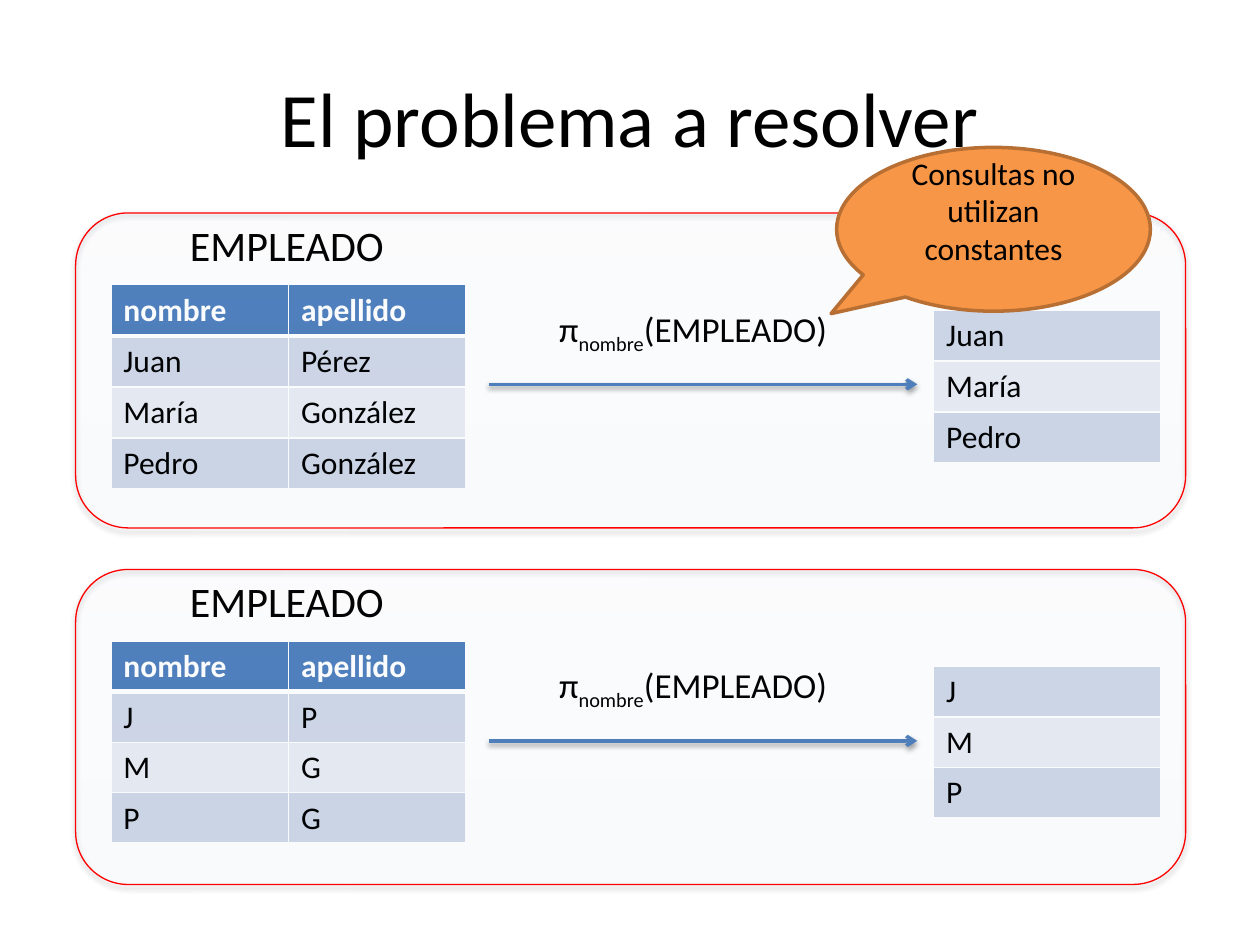
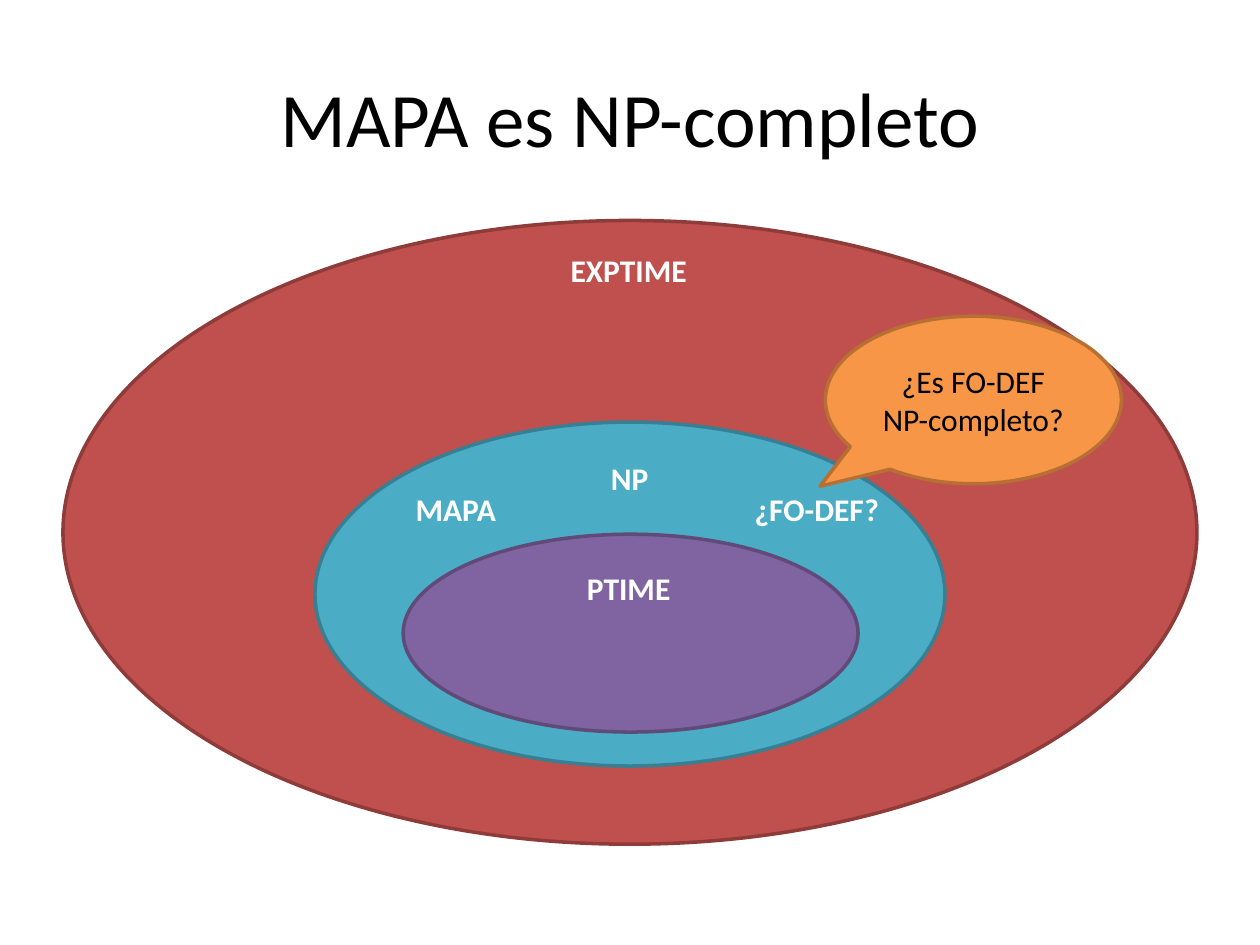
from lxml.etree import SubElement as Sub
from pptx import Presentation
from pptx.dml.color import RGBColor as RGB
from pptx.enum.shapes import MSO_CONNECTOR as LINK, MSO_SHAPE as SHAPE
from pptx.enum.text import MSO_ANCHOR as ANCHOR, PP_ALIGN as ALIGN
from pptx.oxml.ns import qn
from pptx.util import Inches, Pt

FONT = "Calibri"
HUES = {
    "black": "000000", "white": "FFFFFF", "blue": "4F81BD", "red": "FF0000",
    "band": "D0D8E8", "pale": "E9EDF4", "deep": "3F80CE", "sky": "A4C4FF",
    "amber": "F79646", "rust": "B76F34", "brick": "C0504D", "wine": "8E3B39",
    "teal": "4BACC6", "sea": "377F92", "plum": "8064A2", "dusk": "5F4A78",
}
ROW = 0.4


def hue(name):
    """Return the colour with this name."""
    return RGB.from_string(HUES[name])


def style(para, size, tint="black", bold=False):
    """Set the font of a paragraph."""
    font = para.font
    font.name, font.size, font.bold = FONT, Pt(size), bold
    font.color.rgb = hue(tint)


def tag(root, name, **attrs):
    """Append a drawing element with attributes."""
    return Sub(root, qn("a:" + name), {k: str(v) for k, v in attrs.items()})


def paint(root, name, alpha=None):
    """Append a colour, see-through by a percentage if given."""
    node = tag(root, "srgbClr", val=HUES[name])
    if alpha is not None:
        tag(node, "alpha", val=alpha * 1000)


def shade(shape, alpha, dist):
    """Give a shape a soft shadow straight below it."""
    root = tag(shape._element.spPr, "effectLst")
    drop = tag(root, "outerShdw", blurRad=Pt(3.1), dist=Pt(dist),
               dir=5400000, rotWithShape=0)
    paint(drop, "black", alpha)


def add_page(deck, title):
    """Add a slide with the shared title style."""
    page = deck.slides.add_slide(deck.slide_layouts[5])
    head = page.shapes.title
    head.left, head.top = Inches(0.5), Inches(0.3)
    head.width, head.height = Inches(9), Inches(1.25)
    frame = head.text_frame
    frame.text, frame.vertical_anchor = title, ANCHOR.MIDDLE
    frame.paragraphs[0].alignment = ALIGN.CENTER
    style(frame.paragraphs[0], 44)
    return page


def add_form(page, kind, box, fill, line):
    """Add a flat filled shape with an outline."""
    form = page.shapes.add_shape(kind, *map(Inches, box))
    form.shadow.inherit = False
    form.fill.solid()
    form.fill.fore_color.rgb = hue(fill)
    form.line.color.rgb = hue(line)
    form.line.width = Pt(2)
    return form


def add_label(page, box, parts, size, tint="black", bold=False):
    """Add one line of text made of (text, baseline) parts."""
    frame = page.shapes.add_textbox(*map(Inches, box)).text_frame
    frame.word_wrap = False
    para = frame.paragraphs[0]
    style(para, size, tint, bold)
    for text, base in parts:
        run = para.add_run()
        run.text = text
        if base:
            run._r.get_or_add_rPr().set("baseline", str(base * 1000))


def add_call(page, box, text, foot=0.05):
    """Add an orange speech balloon."""
    call = add_form(page, SHAPE.OVAL_CALLOUT, box, "amber", "rust")
    call.adjustments[0], call.adjustments[1] = -0.518, 0.515
    frame = call.text_frame
    frame.word_wrap, frame.vertical_anchor = True, ANCHOR.MIDDLE
    frame.margin_bottom = Inches(foot)
    frame.text = text
    frame.paragraphs[0].alignment = ALIGN.CENTER
    style(frame.paragraphs[0], 18)


def edge(cell, top, bottom):
    """Draw white borders around a cell."""
    for side, width in (("L", 1), ("R", 1), ("T", top), ("B", bottom)):
        line = tag(cell._tc.get_or_add_tcPr(), "ln" + side, w=Pt(width))
        paint(tag(line, "solidFill"), "white")


def add_grid(page, left, top, width, rows, head=False):
    """Add a banded table, with a header row if asked."""
    size = len(rows), len(rows[0])
    box = left, top, width * size[1], ROW * size[0]
    grid = page.shapes.add_table(*size, *map(Inches, box)).table
    grid.first_row = head
    for r, row in enumerate(rows):
        first = head and r == 0
        fill = "blue" if first else ("band", "pale")[(r - head) % 2]
        for c, text in enumerate(row):
            cell = grid.cell(r, c)
            edge(cell, 3 if head and r == 1 else 1, 3 if first else 1)
            cell.fill.solid()
            cell.fill.fore_color.rgb = hue(fill)
            cell.text = text
            style(cell.text_frame.paragraphs[0], 18,
                  "white" if first else "black", first)


def add_arrow(page, left, top, width):
    """Add a level arrow pointing right."""
    ends = map(Inches, (left, top, left + width, top))
    arrow = page.shapes.add_connector(LINK.STRAIGHT, *ends)
    arrow.line.color.rgb = hue("blue")
    arrow.line.width = Pt(2)
    tag(arrow.line._get_or_add_ln(), "tailEnd", type="arrow")
    shade(arrow, 38, 1.6)


def add_frame(page, box):
    """Add a red rounded frame with a faint blue tint."""
    frame = page.shapes.add_shape(SHAPE.ROUNDED_RECTANGLE, *map(Inches, box))
    blend = tag(frame._element.spPr, "gradFill", rotWithShape=1)
    stops = tag(blend, "gsLst")
    for pos, name in ((0, "deep"), (100, "sky")):
        paint(tag(stops, "gs", pos=pos * 1000), name, 2)
    tag(blend, "lin", ang=16200000, scaled=0)
    frame.line.color.rgb = hue("red")
    frame.line.width = Pt(0.75)
    shade(frame, 35, 1.8)


def add_case(page, box, rows):
    """Show a table, its projection query and the result."""
    left, top = box[:2]
    add_grid(page, left + 0.28, top + 0.57, 1.41,
             [("nombre", "apellido"), *rows], True)
    add_grid(page, left + 6.81, top + 0.77, 1.8, [row[:1] for row in rows])
    query = [("π", 0), ("nombre", -25), ("(EMPLEADO)", 0)]
    add_label(page, (left + 3.74, top + 0.7, 2.43, 0.44), query, 20)
    add_label(page, (left + 0.81, top, 1.76, 0.5), [("EMPLEADO", 0)], 24)
    add_arrow(page, left + 3.28, top + 1.36, 3.4)
    add_frame(page, box)


def add_rings(page, box):
    """Show the nested complexity classes and their labels."""
    left, top, width, height = box
    rings = (
        (0, 0, width, height, "brick", "wine"),
        (2, 1.6, 5, 2.73, "teal", "sea"),
        (2.7, 2.49, 3.61, 1.57, "plum", "dusk"),
    )
    for x, y, w, h, fill, line in rings:
        add_form(page, SHAPE.OVAL, (left + x, top + y, w, h), fill, line)
    names = (
        ("EXPTIME", 3.93, 0.19, 1.13), ("PTIME", 4.06, 2.72, 0.87),
        ("NP", 4.25, 1.84, 0.5), ("MAPA", 2.7, 2.09, 0.86),
        ("¿FO-DEF?", 5.39, 2.09, 1.2),
    )
    for name, x, y, w in names:
        add_label(page, (left + x, top + y, w, 0.4), [(name, 0)], 18,
                  "white", True)


def main():
    """Build and save the deck."""
    deck = Presentation()
    deck.slide_width, deck.slide_height = Inches(10), Inches(7.5)

    page = add_page(deck, "El problema a resolver")
    cases = (
        [("Juan", "Pérez"), ("María", "González"), ("Pedro", "González")],
        [("J", "P"), ("M", "G"), ("P", "G")],
    )
    for i, rows in enumerate(cases):
        add_case(page, (0.6, 1.69 + 2.83 * i, 8.81, 2.5), rows)
    add_call(page, (6.64, 1.17, 2.49, 1.3),
             "Consultas no utilizan constantes", 0.35)

    page = add_page(deck, "MAPA es NP-completo")
    add_rings(page, (0.5, 1.75, 9, 4.95))
    add_call(page, (6.55, 2.51, 2.35, 1.33), "¿Es FO-DEF NP-completo?")

    deck.save("out.pptx")


if __name__ == "__main__":
    main()
